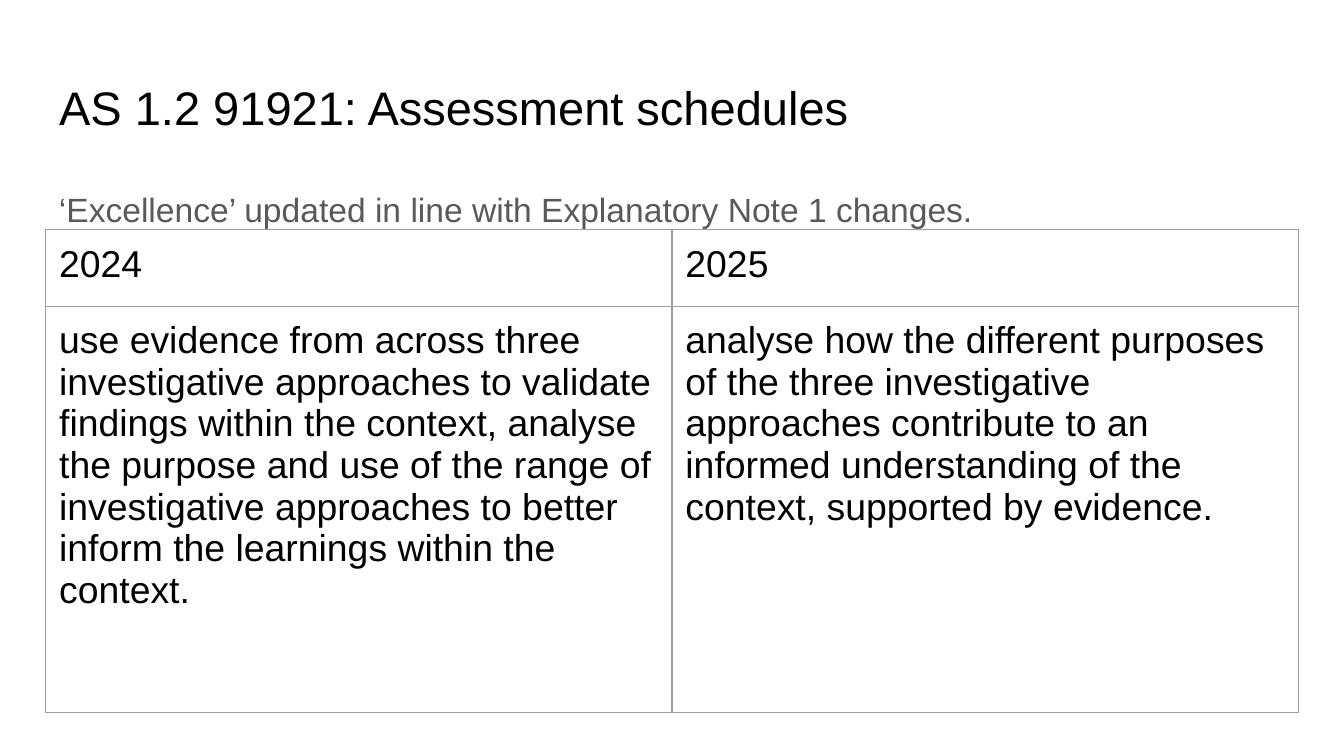
from lxml.etree import SubElement
from pptx import Presentation
from pptx.dml.color import RGBColor as Rgb
from pptx.enum.text import MSO_ANCHOR as Anchor, MSO_AUTO_SIZE as AutoSize, PP_ALIGN as Align
from pptx.oxml.ns import qn
from pptx.util import Pt

PX = 4572  # 200 px to the inch
COLORS = {"page": "FFFFFF", "ink": "000000", "muted": "595959", "border": "9E9E9E"}
LEFT, WIDTH, INSET = 68, 1864, 20
ROW_HEIGHTS = [114, 604]
SCHEDULES = [
    ("2024", "2025"),
    (
        "use evidence from across three investigative approaches to validate findings "
        "within the context, analyse the purpose and use of the range of investigative "
        "approaches to better inform the learnings within the context.",
        "analyse how the different purposes of the three investigative approaches "
        "contribute to an informed understanding of the context, supported by evidence.",
    ),
]


def set_all(target, values):
    for name, value in values.items():
        setattr(target, name, value)


def set_insets(target):
    for side in ("left", "top", "right", "bottom"):
        setattr(target, f"margin_{side}", INSET * PX)


def write_text(frame, text, size, color, **para_format):
    para = frame.paragraphs[0]
    set_all(para, {"alignment": Align.LEFT, **para_format})
    span = para.add_run()
    span.text = text
    set_all(span.font, {"name": "Arial", "size": Pt(size)})
    span.font.color.rgb = Rgb.from_string(COLORS[color])


def fill_box(box, top, height, text, size, color, **para_format):
    set_all(box, {"left": LEFT * PX, "top": top * PX,
                  "width": WIDTH * PX, "height": height * PX})
    frame = box.text_frame
    set_all(frame, {"word_wrap": True, "auto_size": AutoSize.NONE,
                    "vertical_anchor": Anchor.TOP})
    set_insets(frame)
    write_text(frame, text, size, color, **para_format)


def add_borders(cell):
    properties = cell._tc.get_or_add_tcPr()
    for position, side in enumerate(("lnL", "lnR", "lnT", "lnB")):
        line = SubElement(properties, qn(f"a:{side}"), w=str(Pt(0.75)))
        fill = SubElement(line, qn("a:solidFill"))
        SubElement(fill, qn("a:srgbClr"), val=COLORS["border"])
        properties.insert(position, line)  # borders come before the fill


def add_schedule_table(page, top):
    rows, columns = len(SCHEDULES), len(SCHEDULES[0])
    table = page.shapes.add_table(rows, columns, LEFT * PX, top * PX,
                                  WIDTH * PX, sum(ROW_HEIGHTS) * PX).table
    set_all(table, {"first_row": False, "horz_banding": False})
    for row, height, texts in zip(table.rows, ROW_HEIGHTS, SCHEDULES):
        row.height = height * PX
        for cell, text in zip(row.cells, texts):
            cell.fill.background()
            set_insets(cell)
            write_text(cell.text_frame, text, 20, "ink")
            add_borders(cell)


def main():
    deck = Presentation()
    set_all(deck, {"slide_width": 2000 * PX, "slide_height": 1125 * PX})
    page = deck.slides.add_slide(deck.slide_layouts[5])
    page.background.fill.solid()
    page.background.fill.fore_color.rgb = Rgb.from_string(COLORS["page"])

    # Heading and note
    fill_box(page.shapes.title, 97, 125, "AS 1.2 91921: Assessment schedules", 25.2, "ink")
    note = page.shapes.add_textbox(0, 0, 0, 0)
    fill_box(note, 252, 747, "‘Excellence’ updated in line with Explanatory Note 1 changes.",
             18, "muted", line_spacing=1.15, space_after=Pt(12))

    # Comparison of the two years
    add_schedule_table(page, 342)
    deck.save("out.pptx")


if __name__ == "__main__":
    main()
